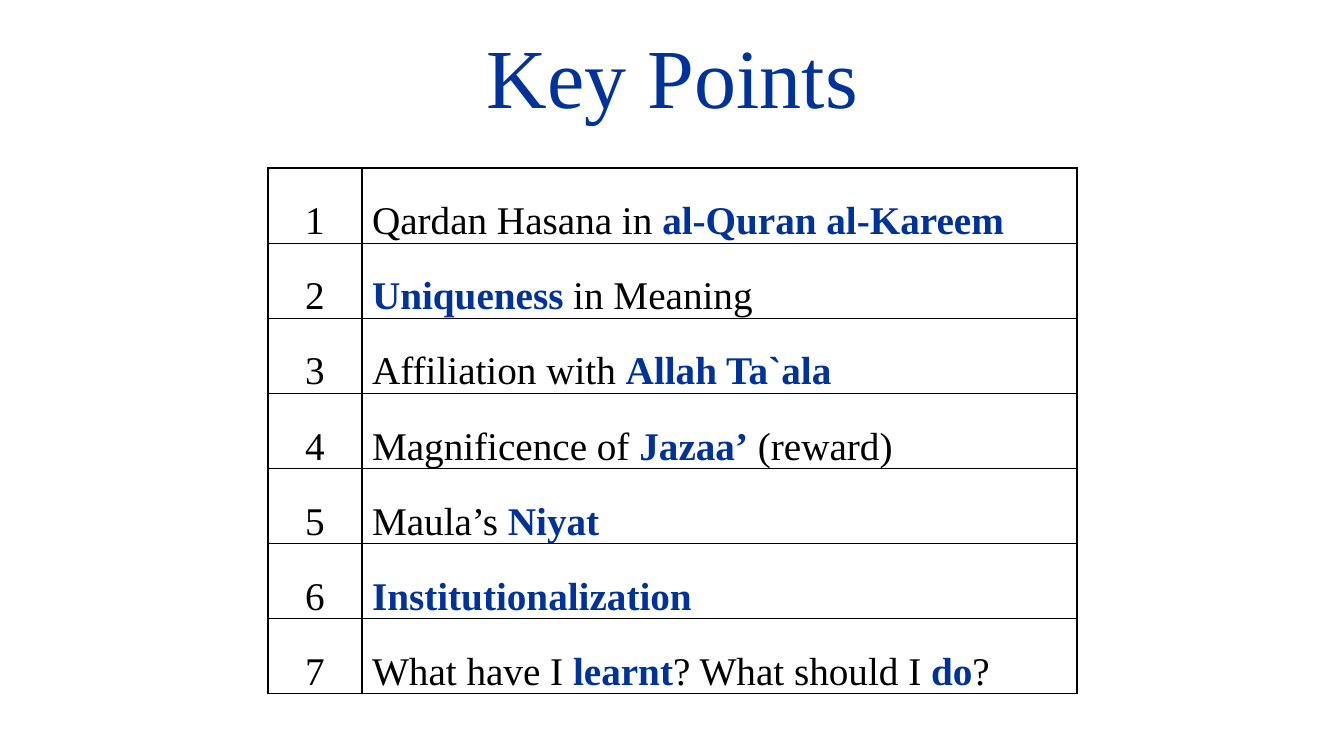
from lxml import etree
from pptx import Presentation
from pptx.dml.color import RGBColor
from pptx.enum.text import MSO_ANCHOR, PP_ALIGN
from pptx.oxml.ns import qn
from pptx.util import Emu, Pt

CENTER, LEFT = PP_ALIGN.CENTER, PP_ALIGN.LEFT
MIDDLE, BOTTOM = MSO_ANCHOR.MIDDLE, MSO_ANCHOR.BOTTOM
FONT = "Times New Roman"
COLORS = {"ink": "000000", "accent": "003399", "paper": "FFFFFF"}
BORDER_SIDES = ("a:lnL", "a:lnR", "a:lnT", "a:lnB")
MARK = "*"

# Words between marks are emphasised.
KEY_POINTS = [
    "Qardan Hasana in *al-Quran al-Kareem*",
    "*Uniqueness* in Meaning",
    "Affiliation with *Allah Ta`ala*",
    "Magnificence of *Jazaa’* (reward)",
    "Maula’s *Niyat*",
    "*Institutionalization*",
    "What have I *learnt*? What should I *do*?",
]


def px(n):
    return Emu(round(n * 914400 / 100.8))


def write(tf, text, size, color="ink", align=LEFT, spacing=1.0):
    """Fill the first paragraph, setting marked words bold in the accent colour."""
    p = tf.paragraphs[0]
    p.alignment = align
    p.line_spacing = spacing
    for i, part in enumerate(text.split(MARK)):
        if not part:
            continue
        strong = i % 2 == 1
        r = p.add_run()
        r.text = part
        r.font.name = FONT
        r.font.size = Pt(size)
        r.font.bold = strong
        r.font.color.rgb = RGBColor.from_string(COLORS["accent" if strong else color])


def add_borders(cell, width=1):
    tc_pr = cell._tc.get_or_add_tcPr()
    for i, side in enumerate(BORDER_SIDES):
        ln = etree.Element(qn(side), w=str(Pt(width)))
        fill = etree.SubElement(ln, qn("a:solidFill"))
        etree.SubElement(fill, qn("a:srgbClr"), val=COLORS["ink"])
        tc_pr.insert(i, ln)


def add_title(slide, text, x, y, w, h):
    tf = slide.shapes.add_textbox(px(x), px(y), px(w), px(h)).text_frame
    tf.word_wrap = True
    tf.vertical_anchor = MIDDLE
    write(tf, text, 60, color="accent", align=CENTER, spacing=0.9)


def add_points_table(slide, points, x, y, w, h, number_w):
    """Numbered points, one to a row, inside a ruled grid."""
    table = slide.shapes.add_table(len(points), 2, px(x), px(y), px(w), px(h)).table
    table.first_row = False
    table.horz_banding = False
    table.columns[0].width = px(number_w)
    table.columns[1].width = px(w - number_w)
    for number, (row, point) in enumerate(zip(table.rows, points), 1):
        row.height = px(h / len(points))
        for cell, text, align in zip(row.cells, (str(number), point), (CENTER, LEFT)):
            cell.margin_top, cell.margin_bottom = px(4), 0
            cell.vertical_anchor = BOTTOM
            cell.fill.background()
            add_borders(cell)
            write(cell.text_frame, text, 28, align=align, spacing=1.5)


def build_key_points(prs):
    slide = prs.slides.add_slide(prs.slide_layouts[6])
    fill = slide.background.fill
    fill.solid()
    fill.fore_color.rgb = RGBColor.from_string(COLORS["paper"])
    add_title(slide, "Key Points", 238, 8, 869, 146)
    add_points_table(slide, KEY_POINTS, 268, 168, 809, 526, number_w=94)


def main():
    prs = Presentation()
    prs.slide_width, prs.slide_height = px(1344), px(756)
    build_key_points(prs)
    prs.save("out.pptx")


if __name__ == "__main__":
    main()
